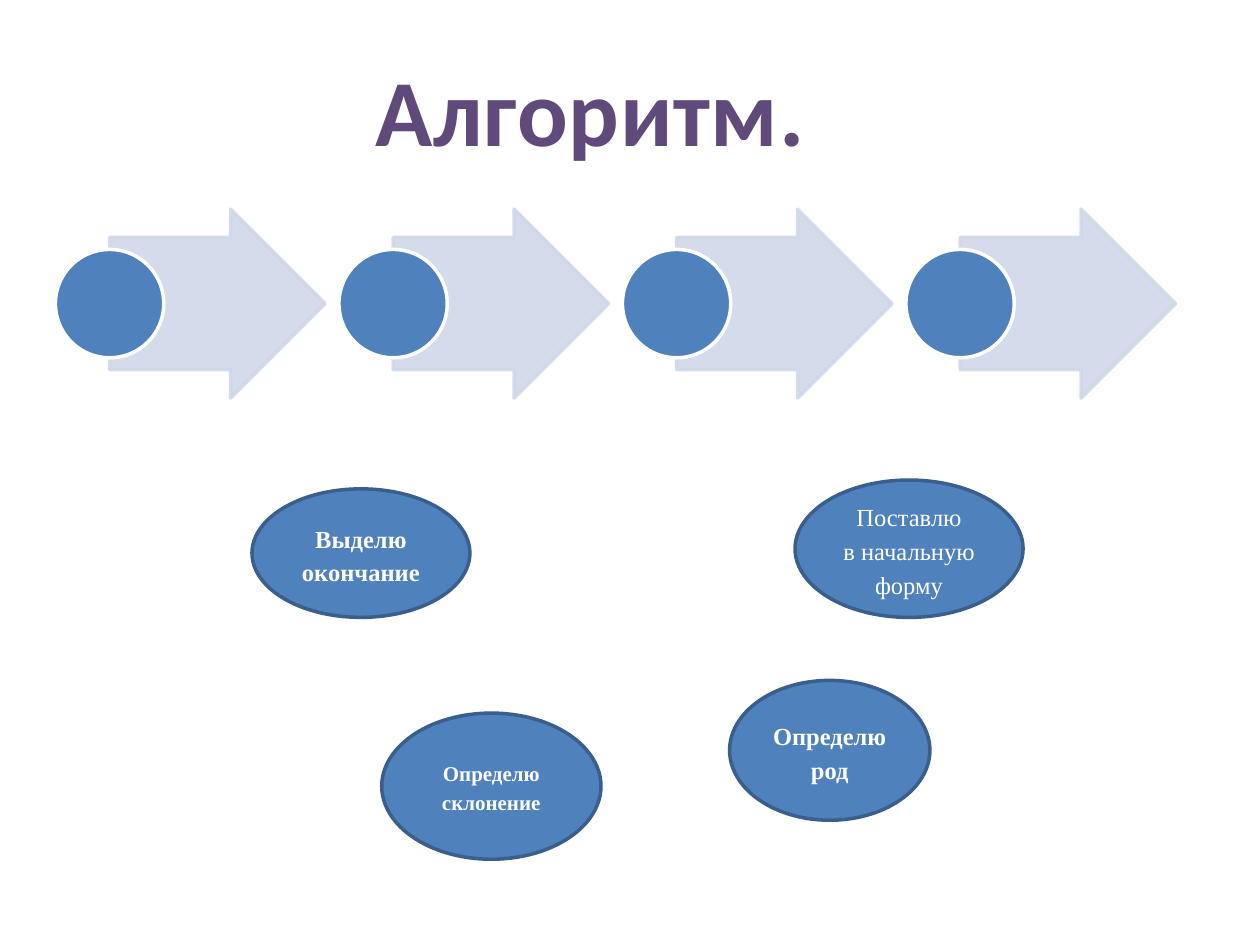
from pptx import Presentation
from pptx.dml.color import RGBColor as Rgb
from pptx.enum.shapes import MSO_SHAPE as Kind
from pptx.enum.text import MSO_ANCHOR as Anchor, MSO_AUTO_SIZE as Fit, PP_ALIGN as Align
from pptx.oxml.ns import qn
from pptx.util import Inches, Pt
from lxml.etree import SubElement as Sub

HUES = {"blue": "4F81BD", "edge": "3A5F8C", "pale": "D0D8E8",
        "white": "FFFFFF", "plum": "604A7B"}


class Page:
    def __init__(self, deck):
        self.slide = deck.slides.add_slide(deck.slide_layouts[5])

    def hue(self, name):
        return Rgb.from_string(HUES[name])

    def font(self, para, face, size, name, bold):
        for run in para.runs:
            font = run.font
            font.name, font.size, font.bold = face, Pt(size), bold
            font.color.rgb = self.hue(name)

    def title(self, text, box):
        shape = self.slide.shapes.title
        shape.left, shape.top, shape.width, shape.height = map(Inches, box)
        frame = shape.text_frame
        frame.text = text
        frame.word_wrap = False
        frame.auto_size = Fit.SHAPE_TO_FIT_TEXT
        para = frame.paragraphs[0]
        para.alignment = Align.CENTER
        self.font(para, "Calibri", 54, "plum", True)
        para.runs[0].font._element.set("spc", "50")

    def shape(self, kind, box, fill, line):
        shape = self.slide.shapes.add_shape(kind, *map(Inches, box))
        shape.shadow.inherit = False
        shape.fill.solid()
        shape.fill.fore_color.rgb = self.hue(fill)
        shape.line.color.rgb = self.hue(line)
        shape.line.width = Pt(2)
        return shape

    def arrow(self, box):
        shape = self.shape(Kind.RIGHT_ARROW, box, "pale", "pale")
        shape.adjustments[0] = 0.7
        shape.adjustments[1] = 0.5
        for tint in shape._element.spPr.iter(qn("a:srgbClr")):
            Sub(tint, qn("a:alpha"), val="90000")

    def dot(self, box):
        self.shape(Kind.OVAL, box, "blue", "white")

    def oval(self, text, box, size, bold):
        frame = self.shape(Kind.OVAL, box, "blue", "edge").text_frame
        frame.text = text
        frame.word_wrap = True
        frame.vertical_anchor = Anchor.MIDDLE
        para = frame.paragraphs[0]
        para.alignment = Align.CENTER
        para.line_spacing = 1.15
        para.space_after = Pt(10)
        self.font(para, "Times New Roman", size, "white", bold)


def main():
    deck = Presentation()
    deck.slide_width, deck.slide_height = Inches(10), Inches(7.5)
    page = Page(deck)
    page.title("Алгоритм.", (2.86, 0.36, 3.65, 1.01))
    for step in range(4):
        left = 0.44 + 2.25 * step
        page.arrow((left + 0.43, 1.66, 1.71, 1.5))
        page.dot((left, 1.98, 0.86, 0.86))
    ovals = [
        ("Выделю окончание", (2, 3.88, 1.73, 1.02), 14, True),
        ("Поставлю\vв начальную форму", (6.31, 3.81, 1.81, 1.09), 14, False),
        ("Определю род", (5.79, 5.4, 1.59, 1.11), 14, True),
        ("Определю склонение", (3.03, 5.66, 1.74, 1.16), 12, True),
    ]
    for text, box, size, bold in ovals:
        page.oval(text, box, size, bold)
    deck.save("out.pptx")


if __name__ == "__main__":
    main()
